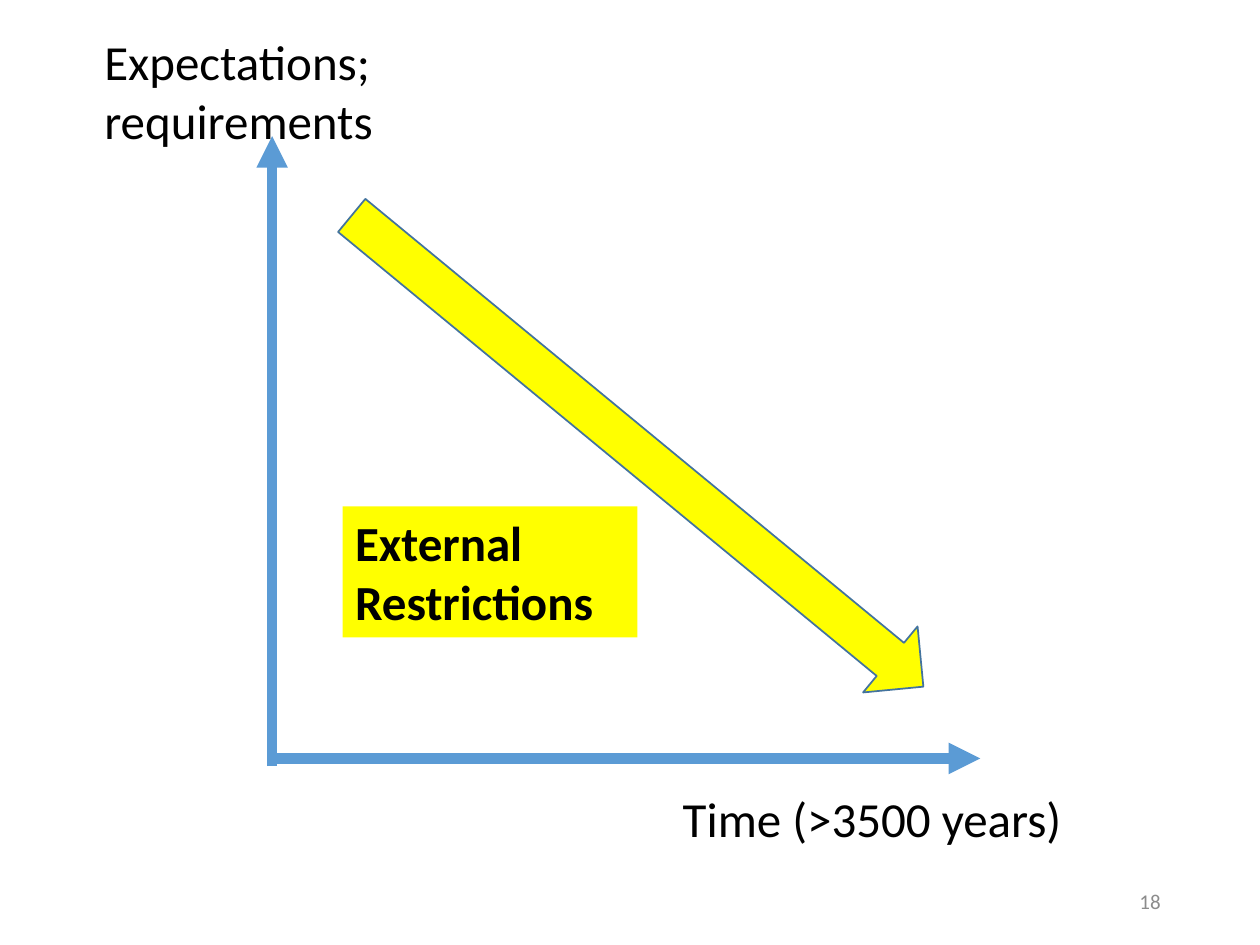
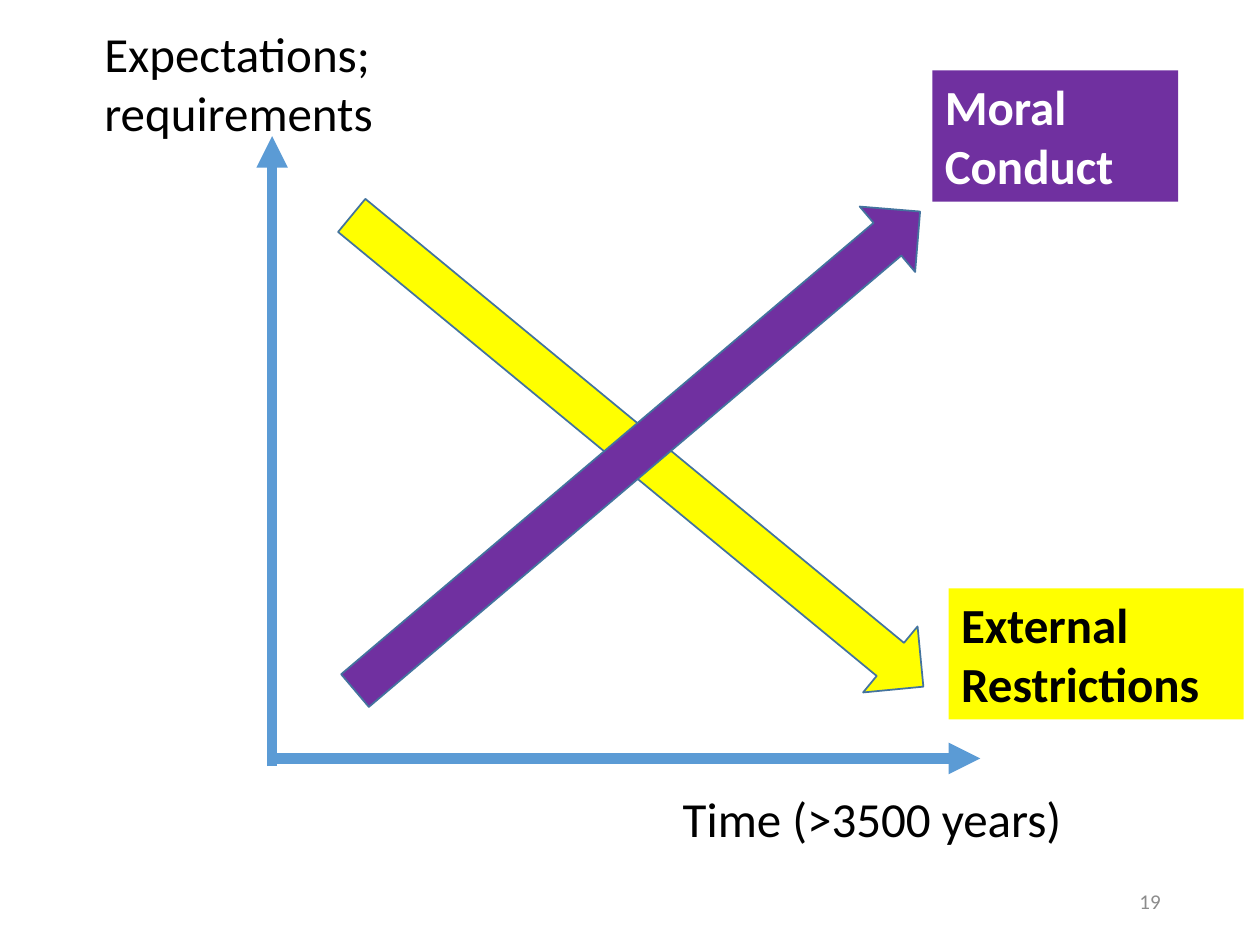
from dataclasses import dataclass
from typing import NamedTuple

from lxml import etree
from pptx import Presentation
from pptx.dml.color import RGBColor
from pptx.enum.shapes import MSO_CONNECTOR, MSO_SHAPE
from pptx.enum.text import MSO_ANCHOR, PP_ALIGN
from pptx.oxml.ns import qn
from pptx.util import Pt

STRAIGHT = MSO_CONNECTOR.STRAIGHT
RECTANGLE = MSO_SHAPE.RECTANGLE
RIGHT_ARROW = MSO_SHAPE.RIGHT_ARROW
TOP, MIDDLE = MSO_ANCHOR.TOP, MSO_ANCHOR.MIDDLE
LEFT, RIGHT = PP_ALIGN.LEFT, PP_ALIGN.RIGHT

PX = 9144
BLANK_LAYOUT = 6


class Box(NamedTuple):
    left: int
    top: int
    width: int
    height: int

    def emu(self):
        return [length * PX for length in self]


@dataclass(frozen=True)
class Theme:
    font: str = "Calibri"
    label_size: int = 28
    number_size: int = 12
    axis_width: int = 6
    outline_width: int = 1
    text: str = "000000"
    light_text: str = "FFFFFF"
    number: str = "8C8C8C"
    axis: str = "5B9BD5"
    outline: str = "43739E"
    restrictions: str = "FFFF00"
    conduct: str = "7030A0"


THEME = Theme()
SLIDE = Box(0, 0, 1000, 750)
PLOT = Box(216, 108, 562, 500)
FALLING, RISING = 39.5, 319.7


def color(value):
    return RGBColor.from_string(value)


def write(shape, text, text_color=THEME.text, size=THEME.label_size,
          bold=False, align=LEFT, anchor=TOP):
    frame = shape.text_frame
    frame.word_wrap = True
    frame.vertical_anchor = anchor
    frame.text = text
    for paragraph in frame.paragraphs:
        paragraph.alignment = align
        for run in paragraph.runs:
            run.font.name = THEME.font
            run.font.size = Pt(size)
            run.font.bold = bold
            run.font.color.rgb = color(text_color)


def add_text(slide, box, text, **style):
    write(slide.shapes.add_textbox(*box.emu()), text, **style)


def add_filled_shape(slide, preset, box, fill):
    shape = slide.shapes.add_shape(preset, *box.emu())
    shape.shadow.inherit = False
    shape.fill.solid()
    shape.fill.fore_color.rgb = color(fill)
    shape.line.fill.background()
    return shape


def add_axis(slide, start, end):
    points = [length * PX for length in (*start, *end)]
    axis = slide.shapes.add_connector(STRAIGHT, *points)
    axis.line.color.rgb = color(THEME.axis)
    axis.line.width = Pt(THEME.axis_width)
    etree.SubElement(axis.line._get_or_add_ln(), qn("a:tailEnd"), type="triangle")
    etree.SubElement(axis._element.spPr, qn("a:effectLst"))


def add_axes(slide, plot):
    bottom = plot.top + plot.height
    baseline = bottom - 6
    add_axis(slide, (plot.left, bottom), (plot.left, plot.top))
    add_axis(slide, (plot.left, baseline), (plot.left + plot.width, baseline))


def add_trend(slide, plot, fill, rotation):
    box = Box(plot.left - 4, plot.top + 216, plot.width + 26, 68)
    arrow = add_filled_shape(slide, RIGHT_ARROW, box, fill)
    arrow.rotation = rotation
    arrow.line.color.rgb = color(THEME.outline)
    arrow.line.width = Pt(THEME.outline_width)


def add_axis_titles(slide, plot, requirements_top):
    add_text(slide, Box(plot.left - 143, requirements_top, 268, 104),
             "Expectations;\nrequirements")
    add_text(slide, Box(plot.left + 316, plot.top + plot.height + 13, 345, 57),
             "Time (>3500 years)")


def add_trend_label(slide, box, text, fill, text_color):
    label = add_filled_shape(slide, RECTANGLE, box, fill)
    write(label, text, text_color, bold=True)


def add_restrictions_label(slide, left, top):
    add_trend_label(slide, Box(left, top, 234, 104), "External Restrictions",
                    THEME.restrictions, THEME.text)


def add_slide_number(slide, page, number):
    box = Box(page.width - 294, page.height - 55, 225, 40)
    add_text(slide, box, str(number), text_color=THEME.number,
             size=THEME.number_size, align=RIGHT, anchor=MIDDLE)


def add_plot_slide(presentation, number, requirements_top):
    slide = presentation.slides.add_slide(presentation.slide_layouts[BLANK_LAYOUT])
    add_slide_number(slide, SLIDE, number)
    add_axes(slide, PLOT)
    add_trend(slide, PLOT, THEME.restrictions, FALLING)
    add_axis_titles(slide, PLOT, requirements_top)
    return slide


def add_restrictions_slide(presentation):
    slide = add_plot_slide(presentation, 18, requirements_top=20)
    add_restrictions_label(slide, PLOT.left + 56, PLOT.top + 294)


def add_conduct_slide(presentation):
    slide = add_plot_slide(presentation, 19, requirements_top=14)
    add_trend(slide, PLOT, THEME.conduct, RISING)
    add_trend_label(slide, Box(PLOT.left + 524, PLOT.top - 52, 195, 104),
                    "Moral\nConduct", THEME.conduct, THEME.light_text)
    add_restrictions_label(slide, PLOT.left + 537, PLOT.top + 359)


def main():
    presentation = Presentation()
    presentation.slide_width = SLIDE.width * PX
    presentation.slide_height = SLIDE.height * PX
    add_restrictions_slide(presentation)
    add_conduct_slide(presentation)
    presentation.save("out.pptx")


if __name__ == "__main__":
    main()
